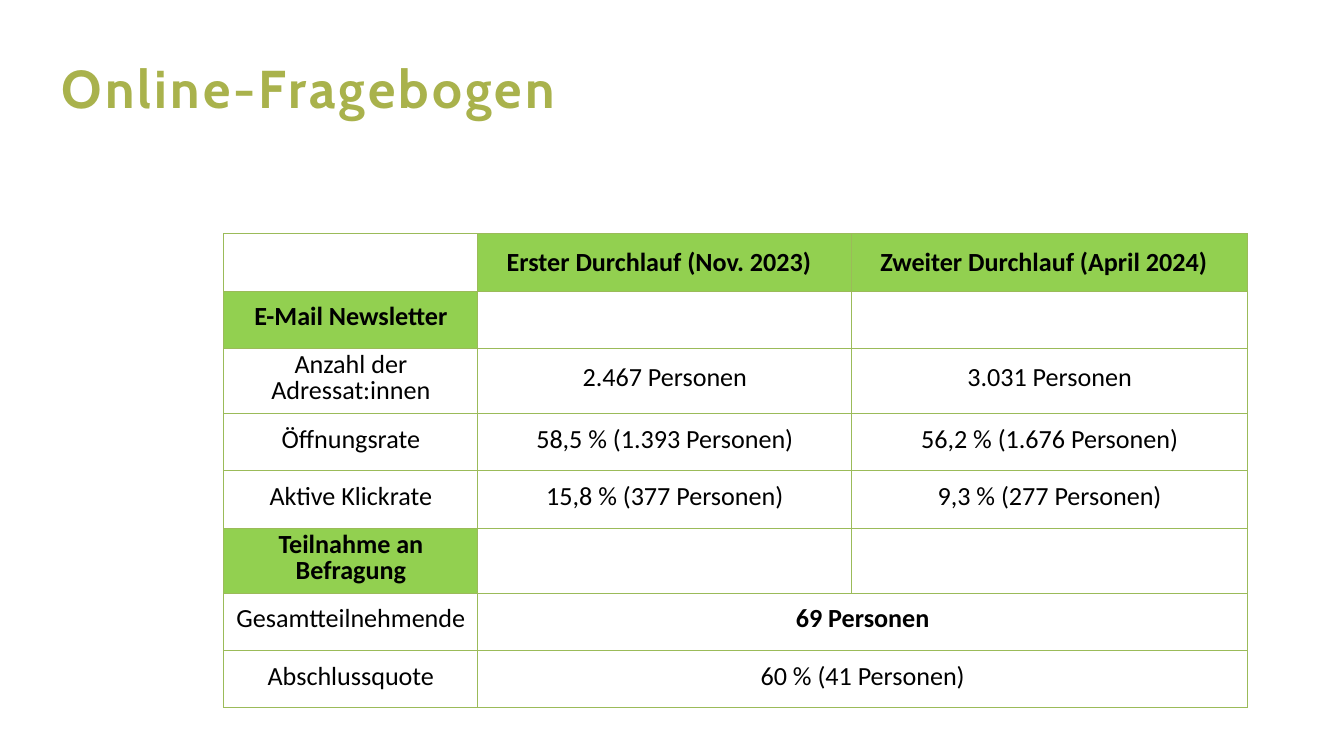
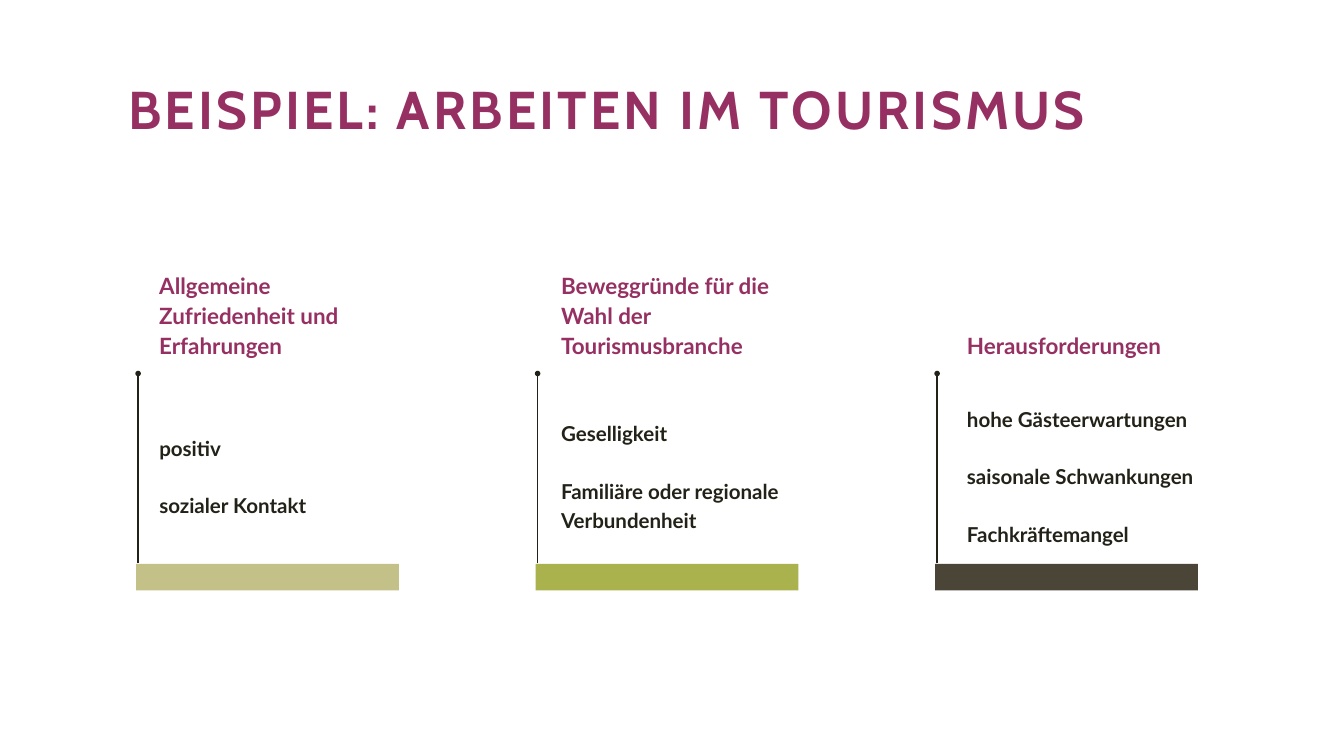
"""Builds two slides on an online survey: a table of figures and three themes about working in tourism."""
from lxml.etree import SubElement
from pptx import Presentation
from pptx.dml.color import RGBColor
from pptx.enum.shapes import MSO_CONNECTOR, MSO_SHAPE
from pptx.enum.text import MSO_ANCHOR, MSO_AUTO_SIZE, PP_ALIGN
from pptx.oxml.ns import qn
from pptx.util import Cm, Pt

COLOURS = {
    "olive": "A9B24C", "sand": "C3C088", "earth": "4B4537", "berry": "963062",
    "ink": "232218", "black": "000000", "green": "92D050", "grid": "9BBB59",
}
FONTS = {
    "title": {"name": "Cabin", "size": Pt(57), "bold": True},
    "heading": {"name": "Lato", "size": Pt(24), "bold": True},
    "list": {"name": "Lato", "size": Pt(22), "bold": True},
    "cell": {"name": "Calibri", "size": Pt(28), "bold": False},
}
FLAT_FRAME = {
    "word_wrap": True, "auto_size": MSO_AUTO_SIZE.NONE, "vertical_anchor": MSO_ANCHOR.TOP,
    "margin_left": 0, "margin_right": 0, "margin_top": 0, "margin_bottom": 0,
}
CELL_FRAME = {
    "vertical_anchor": MSO_ANCHOR.MIDDLE, "margin_left": Cm(0.25), "margin_right": Cm(0.25),
    "margin_top": Cm(0.25), "margin_bottom": Cm(0.25),
}


def assign(target, values):
    """Set every attribute named in values on target."""
    for name, value in values.items():
        setattr(target, name, value)


def rgb(colour):
    """Return the palette entry as a colour object."""
    return RGBColor.from_string(COLOURS[colour])


class Deck:
    """Holds the presentation, its style and the current slide."""

    def __init__(self, width, height):
        """Start an empty presentation of the given size."""
        self.presentation = Presentation()
        assign(self.presentation, {"slide_width": Cm(width), "slide_height": Cm(height)})
        self.slide = None

    def start_slide(self, layout):
        """Add a slide and make it the current one."""
        self.slide = self.presentation.slides.add_slide(self.presentation.slide_layouts[layout])

    def add_lines(self, frame, lines, style, colour, spacing=None, gap=0, align=PP_ALIGN.LEFT, bold=None):
        """Put formatted paragraphs into a text frame."""
        for index, line in enumerate(lines):
            paragraph = frame.paragraphs[0] if index == 0 else frame.add_paragraph()
            assign(paragraph, {"alignment": align, "space_before": Pt(gap if index else 0)})
            if spacing:
                paragraph.line_spacing = Pt(spacing)
            run = paragraph.add_run()
            run.text = line
            assign(run.font, FONTS[style])
            if bold is not None:
                run.font.bold = bold
            run.font.color.rgb = rgb(colour)

    def place(self, shape, left, top, width, height):
        """Move and size a shape, in centimetres."""
        assign(shape, {"left": Cm(left), "top": Cm(top), "width": Cm(width), "height": Cm(height)})

    def title(self, text, colour, box, spacing=None):
        """Fill the title placeholder with letterspaced text."""
        title = self.slide.shapes.title
        self.place(title, *box)
        assign(title.text_frame, FLAT_FRAME)
        self.add_lines(title.text_frame, [text], "title", colour, spacing)
        title.text_frame.paragraphs[0].runs[0].font._element.set("spc", "340")

    def heading(self, text, box):
        """Add a column heading."""
        frame = self.slide.shapes.add_textbox(*map(Cm, box)).text_frame
        assign(frame, FLAT_FRAME)
        self.add_lines(frame, [text], "heading", "berry", 31.8)

    def topics(self, slot, entries, box):
        """Fill a body placeholder with a list that has no bullets."""
        body = self.slide.placeholders[slot]
        self.place(body, *box)
        assign(body.text_frame, FLAT_FRAME)
        self.add_lines(body.text_frame, entries, "list", "ink", 30.8, gap=30.8)
        for paragraph in body.text_frame.paragraphs:
            properties = paragraph._p.get_or_add_pPr()
            properties.set("marL", "0")
            properties.set("indent", "0")
            SubElement(properties, qn("a:buNone"))

    def bar(self, colour, box):
        """Add a plain coloured bar."""
        bar = self.slide.shapes.add_shape(MSO_SHAPE.RECTANGLE, *map(Cm, box))
        bar.shadow.inherit = False
        bar.fill.solid()
        bar.fill.fore_color.rgb = rgb(colour)
        bar.line.fill.background()

    def pin(self, x, bottom, top):
        """Add an upright line with a round head."""
        pin = self.slide.shapes.add_connector(MSO_CONNECTOR.STRAIGHT, Cm(x), Cm(bottom), Cm(x), Cm(top))
        pin.line.color.rgb = rgb("ink")
        pin.line.width = Pt(1.5)
        SubElement(pin.line._get_or_add_ln(), qn("a:tailEnd"), type="oval")
        SubElement(pin._element.spPr, qn("a:effectLst"))

    def border(self, cell):
        """Draw a thin line on all four sides of a cell."""
        properties = cell._tc.get_or_add_tcPr()
        for side in ("lnL", "lnR", "lnT", "lnB"):
            line = SubElement(properties, qn(f"a:{side}"), w=str(Pt(1)))
            fill = SubElement(line, qn("a:solidFill"))
            SubElement(fill, qn("a:srgbClr"), val=COLOURS["grid"])

    def table(self, rows, left, top, widths, row_height, sections):
        """Add a table; a row with two entries spans its last columns."""
        table = self.slide.shapes.add_table(
            len(rows), len(widths), Cm(left), Cm(top), Cm(sum(widths)), Cm(row_height * len(rows))
        ).table
        assign(table, {"first_row": False, "horz_banding": False})
        for column, width in zip(table.columns, widths):
            column.width = Cm(width)
        for r, entries in enumerate(rows):
            table.rows[r].height = Cm(row_height)
            if len(entries) < len(widths):
                table.cell(r, len(entries) - 1).merge(table.cell(r, len(widths) - 1))
            for c in range(len(widths)):
                cell = table.cell(r, c)
                text = entries[c] if c < len(entries) else ""
                marked = bool(text) and (r == 0 or text in sections)
                self.border(cell)
                assign(cell, CELL_FRAME)
                if marked:
                    cell.fill.solid()
                    cell.fill.fore_color.rgb = rgb("green")
                else:
                    cell.fill.background()
                if r == 0:
                    cell.margin_right = Cm(0.7)
                if text:
                    self.add_lines(cell.text_frame, [text], "cell", "black", 28 if r else 35,
                                   align=PP_ALIGN.CENTER, bold=marked or text == "69 Personen")


def survey_slide(deck):
    """Build the slide with the survey figures."""
    deck.start_slide(5)
    sections = ("E-Mail Newsletter", "Teilnahme an Befragung")
    rows = [
        ("", "Erster Durchlauf (Nov. 2023)", "Zweiter Durchlauf (April 2024)"),
        (sections[0], "", ""),
        ("Anzahl der Adressat:innen", "2.467 Personen", "3.031 Personen"),
        ("Öffnungsrate", "58,5 % (1.393 Personen)", "56,2 % (1.676 Personen)"),
        ("Aktive Klickrate", "15,8 % (377 Personen)", "9,3 % (277 Personen)"),
        (sections[1], "", ""),
        ("Gesamtteilnehmende", "69 Personen"),
        ("Abschlussquote", "60 % (41 Personen)"),
    ]
    deck.table(rows, 8.46, 8.84, (9.6, 14.13, 14.96), 2.16, sections)
    deck.title("Online-Fragebogen", "olive", (2.34, 1.7, 24.74, 2.72), 79.8)


def tourism_slide(deck):
    """Build the slide with three themes side by side."""
    deck.start_slide(4)
    deck.title("BEISPIEL: ARBEITEN IM TOURISMUS", "berry", (4.85, 2.9, 37.2, 2.5))
    themes = [
        ("sand", "Allgemeine Zufriedenheit und Erfahrungen", 3, 8.18,
         ["positiv", "sozialer Kontakt"], 3, 7.11, 6.02),
        ("olive", "Beweggründe für die Wahl der Tourismusbranche", 3, 8.94,
         ["Geselligkeit", "Familiäre oder regionale Verbundenheit"], 4, 9.17, 21.21),
        ("earth", "Herausforderungen", 1, 8.76,
         ["hohe Gästeerwartungen", "saisonale Schwankungen", "Fachkräftemangel"], 5, 10.87, 36.55),
    ]
    for index, (colour, heading, heading_lines, heading_width,
                entries, list_lines, list_width, text_left) in enumerate(themes):
        left = 5.15 + 15.1 * index
        heading_height = 1.12 * heading_lines
        list_height = 1.09 * list_lines
        deck.bar(colour, (left, 21.32, 9.93, 1))
        deck.pin(left + 0.07, 21.3, 14.12)
        deck.heading(heading, (text_left, 13.56 - heading_height, heading_width, heading_height))
        deck.topics(index + 1, entries, (text_left, 17.95 - list_height / 2, list_width, list_height))
    spare = deck.slide.placeholders[4]._element
    spare.getparent().remove(spare)


def main():
    """Build and save the presentation."""
    deck = Deck(50.8, 28.58)
    survey_slide(deck)
    tourism_slide(deck)
    deck.presentation.save("out.pptx")


if __name__ == "__main__":
    main()
